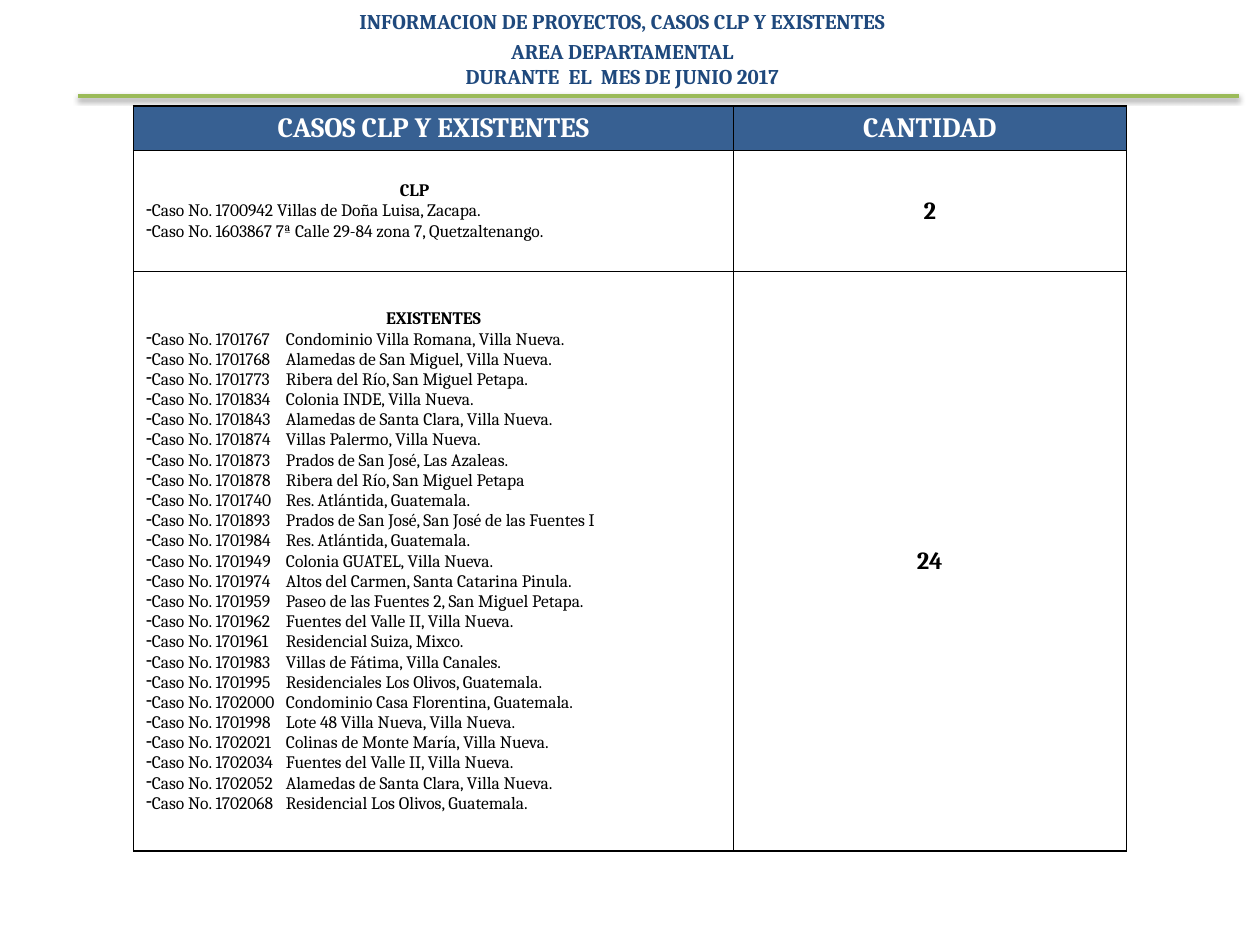
from copy import deepcopy

from lxml import etree
from pptx import Presentation
from pptx.dml.color import RGBColor
from pptx.enum.shapes import MSO_CONNECTOR
from pptx.enum.text import MSO_ANCHOR, MSO_AUTO_SIZE, PP_ALIGN
from pptx.oxml.ns import qn
from pptx.util import Inches, Pt

CENTER, LEFT = PP_ALIGN.CENTER, PP_ALIGN.LEFT
TOP, MIDDLE = MSO_ANCHOR.TOP, MSO_ANCHOR.MIDDLE
NO_AUTOFIT = MSO_AUTO_SIZE.NONE
STRAIGHT = MSO_CONNECTOR.STRAIGHT
TITLE_ONLY = 5

FONT = "Cambria"
NAVY, BLUE, GREEN = "1F497D", "376092", "9BBB59"
BLACK, WHITE = "000000", "FFFFFF"

TITLE_LINES = [
    ("INFORMACION DE PROYECTOS, CASOS CLP Y EXISTENTES", 0, 0.12),
    ("AREA DEPARTAMENTAL\vDURANTE  EL  MES DE JUNIO 2017", 2.4, 0),
]
HEADERS = ["CASOS CLP Y EXISTENTES", "CANTIDAD"]
CLP_CASES = [
    "1700942 Villas de Doña Luisa, Zacapa.",
    "1603867 7ª Calle 29-84 zona 7, Quetzaltenango.",
]
EXISTING_CASES = [
    "1701767\tCondominio Villa Romana, Villa Nueva.",
    "1701768\tAlamedas de San Miguel, Villa Nueva.",
    "1701773\tRibera del Río, San Miguel Petapa.",
    "1701834\tColonia INDE, Villa Nueva.",
    "1701843\tAlamedas de Santa Clara, Villa Nueva.",
    "1701874\tVillas Palermo, Villa Nueva.",
    "1701873\tPrados de San José, Las Azaleas.",
    "1701878\tRibera del Río, San Miguel Petapa",
    "1701740\tRes. Atlántida, Guatemala.",
    "1701893\tPrados de San José, San José de las Fuentes I",
    "1701984\tRes. Atlántida, Guatemala.",
    "1701949\tColonia GUATEL, Villa Nueva.",
    "1701974\tAltos del Carmen, Santa Catarina Pinula.",
    "1701959\tPaseo de las Fuentes 2, San Miguel Petapa.",
    "1701962\tFuentes del Valle II, Villa Nueva.",
    "1701961\tResidencial Suiza, Mixco.",
    "1701983\tVillas de Fátima, Villa Canales.",
    "1701995\tResidenciales Los Olivos, Guatemala.",
    "1702000\tCondominio Casa Florentina, Guatemala.",
    "1701998\tLote 48 Villa Nueva, Villa Nueva.",
    "1702021\tColinas de Monte María, Villa Nueva.",
    "1702034\tFuentes del Valle II, Villa Nueva.",
    "1702052\tAlamedas de Santa Clara, Villa Nueva.",
    "1702068\tResidencial Los Olivos, Guatemala.",
]
CASE_GROUPS = [("CLP", CLP_CASES, 0.3), ("EXISTENTES", EXISTING_CASES, 0)]


def color(value):
    return RGBColor.from_string(value)


def add_child(parent, tag, **attributes):
    child = etree.SubElement(parent, qn(tag))
    for key, value in attributes.items():
        child.set(key, str(value))
    return child


def add_text(frame, text, size=10, fill=BLACK, bold=False, align=CENTER,
             before=0, right_indent=0, bullet=None, tab=None):
    paragraph = frame.paragraphs[0]
    if paragraph.runs:
        paragraph = frame.add_paragraph()
    paragraph.text = text
    paragraph.alignment = align
    paragraph.space_before = Pt(before)
    properties = paragraph._p.get_or_add_pPr()
    if right_indent:
        properties.set("marR", str(Inches(right_indent)))
    if bullet:
        properties.set("marL", "0")
        properties.set("indent", "0")
        add_child(properties, "a:buFontTx")
        add_child(properties, "a:buChar", char=bullet)
    if tab:
        stops = add_child(properties, "a:tabLst")
        add_child(stops, "a:tab", pos=Inches(tab), algn="l")
    for run in paragraph.runs:
        run.font.name = FONT
        run.font.size = Pt(size)
        run.font.bold = bold
        run.font.color.rgb = color(fill)
    for line_break in paragraph._p.findall(qn("a:br")):
        line_break.insert(0, deepcopy(paragraph.runs[0].font._element))


def place_title(slide, left, top, width, height):
    title = slide.shapes.title
    title.left, title.top = Inches(left), Inches(top)
    title.width, title.height = Inches(width), Inches(height)
    frame = title.text_frame
    frame.word_wrap = True
    frame.auto_size = NO_AUTOFIT
    frame.vertical_anchor = TOP
    for text, before, right_indent in TITLE_LINES:
        add_text(frame, text, size=12, fill=NAVY, bold=True,
                 before=before, right_indent=right_indent)


def place_rule(slide, left, top, width):
    rule = slide.shapes.add_connector(
        STRAIGHT, Inches(left), Inches(top), Inches(left + width), Inches(top))
    rule.line.color.rgb = color(GREEN)
    rule.line.width = Pt(2)
    effects = add_child(rule._element.spPr, "a:effectLst")
    shadow = add_child(effects, "a:outerShdw", blurRad=Pt(3.1), dist=Pt(1.6),
                       dir=90 * 60000, algn="t", rotWithShape=0)
    shade = add_child(shadow, "a:srgbClr", val=BLACK)
    add_child(shade, "a:alpha", val=38000)


def style_cell(cell, fill, anchor):
    properties = cell._tc.get_or_add_tcPr()
    for side in ("a:lnL", "a:lnR", "a:lnT", "a:lnB"):
        border = add_child(properties, side, w=Pt(1))
        add_child(add_child(border, "a:solidFill"), "a:srgbClr", val=BLACK)
    cell.fill.solid()
    cell.fill.fore_color.rgb = color(fill)
    cell.vertical_anchor = anchor


def place_cases(slide, left, top, column_widths, row_heights):
    table = slide.shapes.add_table(
        len(row_heights), len(column_widths), Inches(left), Inches(top),
        Inches(sum(column_widths)), Inches(sum(row_heights))).table
    table.first_row = table.horz_banding = False
    for column, width in zip(table.columns, column_widths):
        column.width = Inches(width)
    for row, height in zip(table.rows, row_heights):
        row.height = Inches(height)
    for cell, header in zip(table.rows[0].cells, HEADERS):
        style_cell(cell, BLUE, TOP)
        add_text(cell.text_frame, header, size=16, fill=WHITE, bold=True)
    for row, (heading, cases, right_indent) in enumerate(CASE_GROUPS, 1):
        details, quantity = table.cell(row, 0), table.cell(row, 1)
        for cell in (details, quantity):
            style_cell(cell, WHITE, MIDDLE)
        add_text(details.text_frame, heading, bold=True,
                 right_indent=right_indent)
        for case in cases:
            add_text(details.text_frame, f"Caso No. {case}", align=LEFT,
                     bullet="-", tab=1.11)
        add_text(quantity.text_frame, str(len(cases)), size=14, bold=True)


def main():
    deck = Presentation()
    deck.slide_width, deck.slide_height = Inches(10), Inches(7.5)
    slide = deck.slides.add_slide(deck.slide_layouts[TITLE_ONLY])
    place_cases(slide, 1.06, 0.84, [4.76, 3.12], [0.35, 0.96, 4.6])
    place_title(slide, 0.5, 0.02, 9, 0.89)
    place_rule(slide, 0.62, 0.76, 9.21)
    deck.save("out.pptx")


if __name__ == "__main__":
    main()
